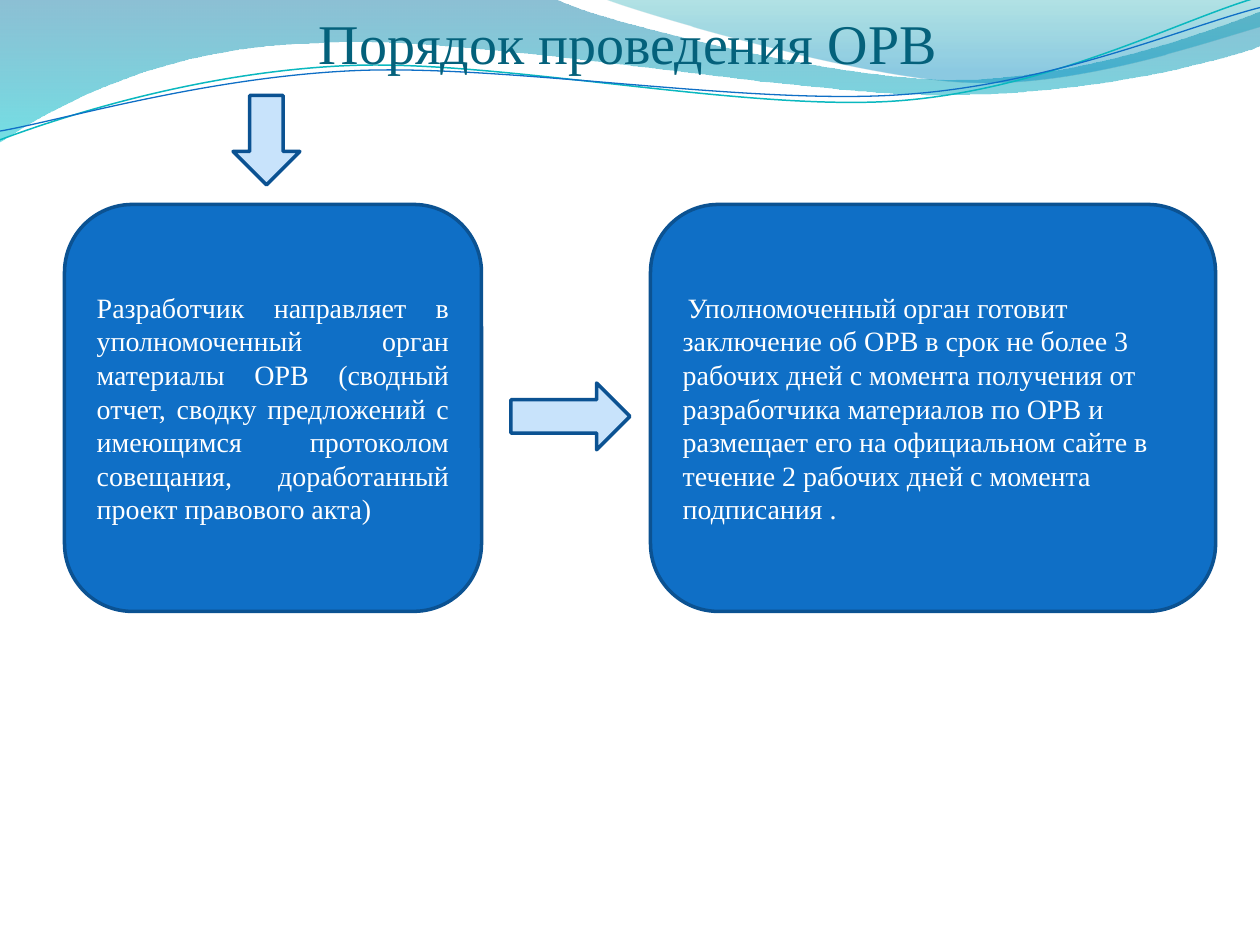
from math import cos, radians, sin

from lxml.etree import SubElement
from pptx import Presentation
from pptx.dml.color import RGBColor
from pptx.enum.shapes import MSO_SHAPE
from pptx.enum.text import MSO_ANCHOR, PP_ALIGN
from pptx.oxml.ns import qn
from pptx.util import Inches, Pt

CELL = 0.1
TILT = 2.7
SERIF = "Times New Roman"
HUES = {"title": "04617B", "card": "0F6FC6", "edge": "0B5292", "arrow": "C8E3FB",
        "text": "FFFFFF", "teal": "0AB8BF", "deep": "0074A1", "aqua": "00C6CF",
        "sea": "00A1A9", "sky": "008BBF"}

LEFT = [[(0, 0)], [(44, -0.1)],
        [(47.6, 1.7), (66.4, 6.3), (75.8, 6.3)], [(85.3, 6.3), (95.8, 2.6), (100, 0.9)],
        [(100.1, 3.6)],
        [(98.3, 4.4), (87, 7.6), (74.6, 7.5)], [(62.2, 7.5), (38.2, 2.8), (25.7, 3.4)],
        [(12.9, 3.6), (4.6, 8.3), (-0.1, 11.3)], [(0, 0)]]
RIGHT = [[(47.9, -0.1)],
         [(50.9, 1.1), (68.2, 6.2), (76.9, 6.5)], [(85.6, 6.9), (96.1, 3.2), (100, 2.1)],
         [(100, 0)], [(47.9, -0.1)]]
UPPER = [[(0, 11.1)],
         [(4.8, 9.3), (15.8, 5.7), (27.7, 5.2)], [(39.5, 4.7), (59.3, 8.9), (71.3, 8)],
         [(83.3, 7.1), (93.8, 1.5), (99.8, -0.2)]]
LOWER = [[(0, 10.4)],
         [(4.7, 9.6), (16.4, 6.1), (28.3, 5.6)], [(40.3, 5.1), (59.7, 8.4), (71.7, 7.5)],
         [(83.6, 6.7), (94.1, 2.1), (100, 0.6)]]

SEND = ("Разработчик направляет в уполномоченный орган материалы ОРВ (сводный отчет, "
        "сводку предложений с имеющимся протоколом совещания, доработанный проект "
        "правового акта)")
REPLY = ("Уполномоченный орган готовит заключение об ОРВ в срок не более 3 рабочих дней "
         "с момента получения от разработчика материалов по ОРВ и размещает его на "
         "официальном сайте в течение 2 рабочих дней с момента подписания .")


def hue(name):
    """Return the named colour."""
    return RGBColor.from_string(HUES[name])


def grid(*cells):
    """Turn grid cells into slide lengths."""
    return [Inches(cell * CELL) for cell in cells]


def turn(steps, mid, angle):
    """Turn every point clockwise around a centre."""
    c, s = cos(radians(angle)), sin(radians(angle))
    return [[(mid[0] + (x - mid[0]) * c - (y - mid[1]) * s,
              mid[1] + (x - mid[0]) * s + (y - mid[1]) * c) for x, y in step]
            for step in steps]


def draw(slide, box, steps, close):
    """Build an outline of lines and curves from the corner of the box."""
    dots = [grid(box[0] + x, box[1] + y) for step in steps for x, y in step]
    pen = slide.shapes.build_freeform(*dots[0])
    pen.add_line_segments(dots[1:], close=close)
    shape = pen.convert_to_shape()
    shape.shadow.inherit = False
    lines = iter(list(shape.element.iter(qn("a:lnTo"))))
    for step in steps[1:]:
        parts = [next(lines) for _ in step]
        if len(parts) == 3:
            bend = parts[0].makeelement(qn("a:cubicBezTo"))
            parts[0].addprevious(bend)
            for part in parts:
                bend.append(part[0])
                part.getparent().remove(part)
    return shape


def add_wave(slide, box, steps, stops):
    """Draw a translucent wave that fades from top to bottom."""
    wave = draw(slide, box, steps, True)
    wave.fill.gradient()
    wave.fill.gradient_angle = 270
    for stop, (place, name, _) in zip(wave.fill.gradient_stops, stops):
        stop.position = place
        stop.color.rgb = hue(name)
    for tint, (_, _, share) in zip(wave.element.iter(qn("a:srgbClr")), stops):
        SubElement(tint, qn("a:alpha")).set("val", str(share * 1000))
    wave.line.fill.background()


def add_curve(slide, box, steps, mid, name, width):
    """Draw a thin tilted curve."""
    curve = draw(slide, box, turn(steps, mid, TILT), False)
    curve.rotation = 360 - TILT
    curve.fill.background()
    curve.line.color.rgb = hue(name)
    curve.line.width = Pt(width)
    return curve


def add_band(slide, box):
    """Draw the waves and the pair of thin curves."""
    add_wave(slide, box, LEFT, [(0, "deep", 45), (1, "aqua", 55)])
    add_wave(slide, box, RIGHT, [(0, "sea", 30), (0.8, "sky", 45)])
    pair = [add_curve(slide, box, UPPER, (49.9, 5.75), "teal", 0.85),
            add_curve(slide, box, LOWER, (49.95, 5.9), "card", 0.75)]
    slide.shapes.add_group_shape(pair)


def style(run, size, name, face=SERIF):
    """Set the font of a run."""
    run.font.size = Pt(size)
    run.font.name = face
    run.font.color.rgb = hue(name)


def add_title(slide, box, text):
    """Place the title above the waves."""
    title = slide.shapes.title
    slide.shapes.element.append(title.element)
    title.left, title.top, title.width, title.height = grid(*box)
    frame = title.text_frame
    frame.text = text
    frame.vertical_anchor = MSO_ANCHOR.BOTTOM
    frame.margin_left = frame.margin_right = frame.margin_bottom = 0
    frame.margin_top = Inches(0.05)
    frame.paragraphs[0].alignment = PP_ALIGN.CENTER
    style(frame.paragraphs[0].runs[0], 32, "title")


def add_block(slide, box, kind, name):
    """Draw a filled shape with a dark edge."""
    block = slide.shapes.add_shape(kind, *grid(*box))
    block.shadow.inherit = False
    block.fill.solid()
    block.fill.fore_color.rgb = hue(name)
    block.line.color.rgb = hue("edge")
    block.line.width = Pt(2)
    return block


def add_card(slide, box, text, align, lead=""):
    """Draw a rounded card with its text."""
    card = add_block(slide, box, MSO_SHAPE.ROUNDED_RECTANGLE, "card")
    frame = card.text_frame
    frame.word_wrap = True
    frame.vertical_anchor = MSO_ANCHOR.MIDDLE
    para = frame.paragraphs[0]
    para.alignment = align
    if lead:
        para.text = lead
        style(para.runs[0], 14, "text", "Vollkorn")
    run = para.add_run()
    run.text = text
    style(run, 16, "text")


def main():
    """Build the slide and save it."""
    deck = Presentation()
    deck.slide_width, deck.slide_height = grid(100, 75)
    slide = deck.slides.add_slide(deck.slide_layouts[5])
    add_band(slide, (0, 0))
    add_title(slide, (5, 0.5, 90.8, 5.5), "Порядок проведения ОРВ ")
    add_card(slide, (5.12, 16.23, 33.1, 32.3), SEND, PP_ALIGN.JUSTIFY)
    add_block(slide, (40.55, 30.4, 9.45, 5.3), MSO_SHAPE.RIGHT_ARROW, "arrow")
    add_card(slide, (51.63, 16.23, 44.85, 32.3), REPLY, PP_ALIGN.LEFT, " ")
    add_block(slide, (18.5, 7.57, 5.3, 7.1), MSO_SHAPE.DOWN_ARROW, "arrow")
    deck.save("out.pptx")


if __name__ == "__main__":
    main()
